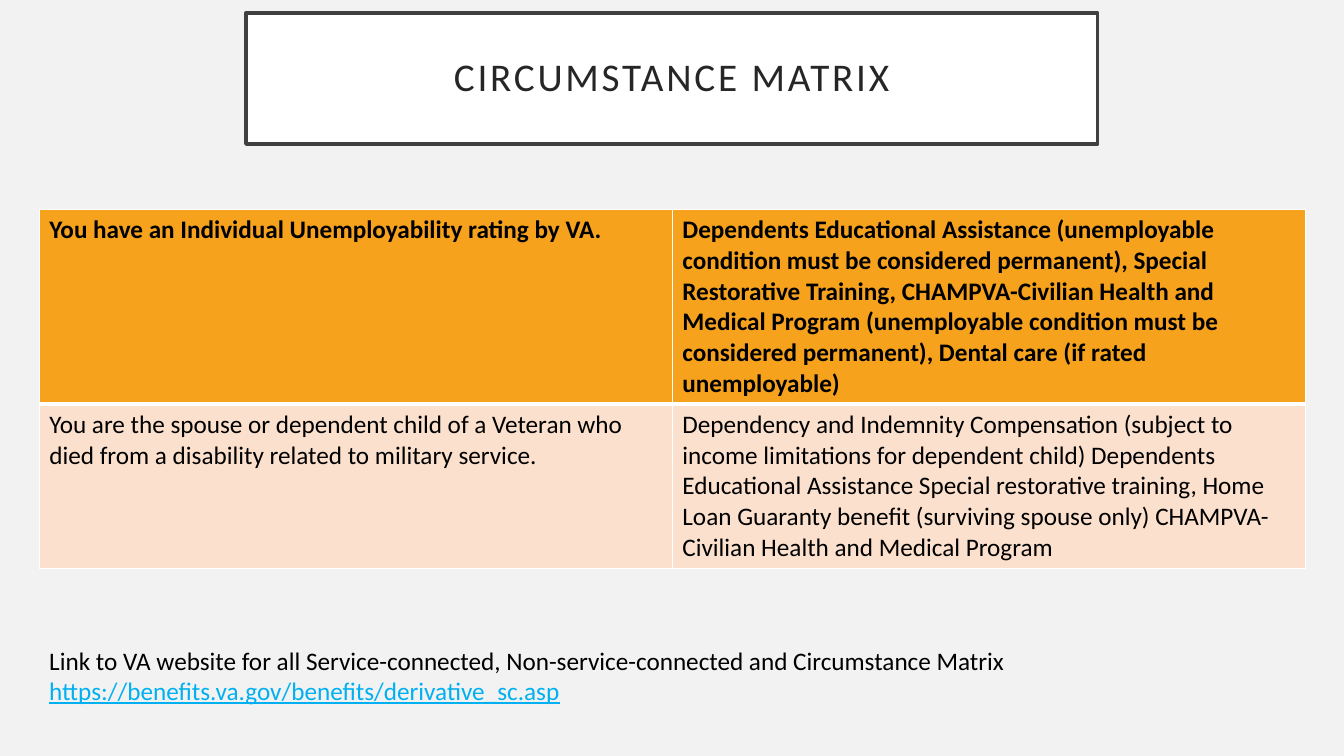
from lxml import etree
from pptx import Presentation
from pptx.dml.color import RGBColor
from pptx.enum.text import MSO_ANCHOR, MSO_AUTO_SIZE, PP_ALIGN
from pptx.oxml.ns import qn
from pptx.util import Pt

MIDDLE = MSO_ANCHOR.MIDDLE
FIXED = MSO_AUTO_SIZE.NONE
GROW = MSO_AUTO_SIZE.SHAPE_TO_FIT_TEXT
LEFT, CENTER = PP_ALIGN.LEFT, PP_ALIGN.CENTER

PALE = RGBColor(0xF2, 0xF2, 0xF2)
WHITE = RGBColor(0xFF, 0xFF, 0xFF)
BLACK = RGBColor(0, 0, 0)
INK = RGBColor(0x26, 0x26, 0x26)
FRAME = RGBColor(0x40, 0x40, 0x40)
ORANGE = RGBColor(0xF6, 0xA2, 0x1D)
PEACH = RGBColor(0xFB, 0xE0, 0xCD)
BLUE = RGBColor(0, 0xB0, 0xF0)

FONT = "Calibri"
EDGE, WIDE = 28.08, 904.32
HEIGHTS = (139, 117)
FILLS = (ORANGE, PEACH)
ROWS = (
    (
        "You have an Individual Unemployability rating by VA.",
        "Dependents Educational Assistance (unemployable condition must be "
        "considered permanent), Special Restorative Training, CHAMPVA-Civilian "
        "Health and Medical Program (unemployable condition must be considered "
        "permanent), Dental care (if rated unemployable)",
    ),
    (
        "You are the spouse or dependent child of a Veteran who died from a "
        "disability related to military service.",
        "Dependency and Indemnity Compensation (subject to income limitations "
        "for dependent child) Dependents Educational Assistance Special "
        "restorative training, Home Loan Guaranty benefit (surviving spouse "
        "only) CHAMPVA-Civilian Health and Medical Program",
    ),
)


def write(para, text, size=18, color=BLACK, bold=False, line=False,
          align=LEFT, gap=0):
    """Add a formatted run to a paragraph."""
    para.alignment = align
    run = para.add_run()
    run.text = text
    font = run.font
    font.name, font.size, font.bold = FONT, Pt(size), bold
    font.underline = line
    font.color.rgb = color
    if gap:
        font._element.set("spc", str(gap * 100))


def place(shape, left, top, width, height):
    """Set the position and size of a shape."""
    shape.left, shape.top = Pt(left), Pt(top)
    shape.width, shape.height = Pt(width), Pt(height)


def head(slide, text):
    """Format the title placeholder as a framed box."""
    box = slide.shapes.title
    place(box, 175.68, 9.36, 608.4, 93.6)
    box.fill.solid()
    box.fill.fore_color.rgb = WHITE
    box.line.color.rgb = FRAME
    box.line.width = Pt(2.5)
    frame = box.text_frame
    frame.word_wrap = True
    frame.auto_size = FIXED
    frame.vertical_anchor = MIDDLE
    frame.margin_left = frame.margin_right = Pt(14.4)
    frame.margin_top = frame.margin_bottom = Pt(14.4)
    para = frame.paragraphs[0]
    para.line_spacing = 0.9
    write(para, text, size=28, color=INK, align=CENTER, gap=2)


def border(cell, top, base):
    """Draw white borders around a table cell."""
    props = cell._tc.get_or_add_tcPr()
    for side, width in zip("LRTB", (1, 1, top, base)):
        line = etree.SubElement(props, qn(f"a:ln{side}"), w=str(Pt(width)))
        fill = etree.SubElement(line, qn("a:solidFill"))
        etree.SubElement(fill, qn("a:srgbClr"), val=str(WHITE))


def matrix(slide):
    """Add the table of circumstances and benefits."""
    shape = slide.shapes.add_table(
        len(ROWS), 2, Pt(EDGE), Pt(149.76), Pt(WIDE), Pt(sum(HEIGHTS)))
    table = shape.table
    table.horz_banding = False
    for i, texts in enumerate(ROWS):
        first = i == 0
        table.rows[i].height = Pt(HEIGHTS[i])
        for j, text in enumerate(texts):
            cell = table.cell(i, j)
            border(cell, *((1, 3) if first else (3, 1)))
            cell.fill.solid()
            cell.fill.fore_color.rgb = FILLS[i]
            write(cell.text_frame.paragraphs[0], text, bold=first)


def note(slide):
    """Add the line that points to the website."""
    box = slide.shapes.add_textbox(Pt(EDGE), Pt(457.2), Pt(WIDE), Pt(72.72))
    frame = box.text_frame
    frame.word_wrap = True
    frame.auto_size = GROW
    para = frame.paragraphs[0]
    write(para, "Link to VA website for all Service-connected, "
                "Non-service-connected and Circumstance Matrix ")
    write(para, "https://benefits.va.gov/benefits/derivative_sc.asp",
          color=BLUE, line=True)


def main():
    """Build and save the slide."""
    deck = Presentation()
    deck.slide_width, deck.slide_height = Pt(960), Pt(540)
    slide = deck.slides.add_slide(deck.slide_layouts[5])
    slide.background.fill.solid()
    slide.background.fill.fore_color.rgb = PALE
    head(slide, "CIRCUMSTANCE MATRIX")
    matrix(slide)
    note(slide)
    deck.save("out.pptx")


if __name__ == "__main__":
    main()
